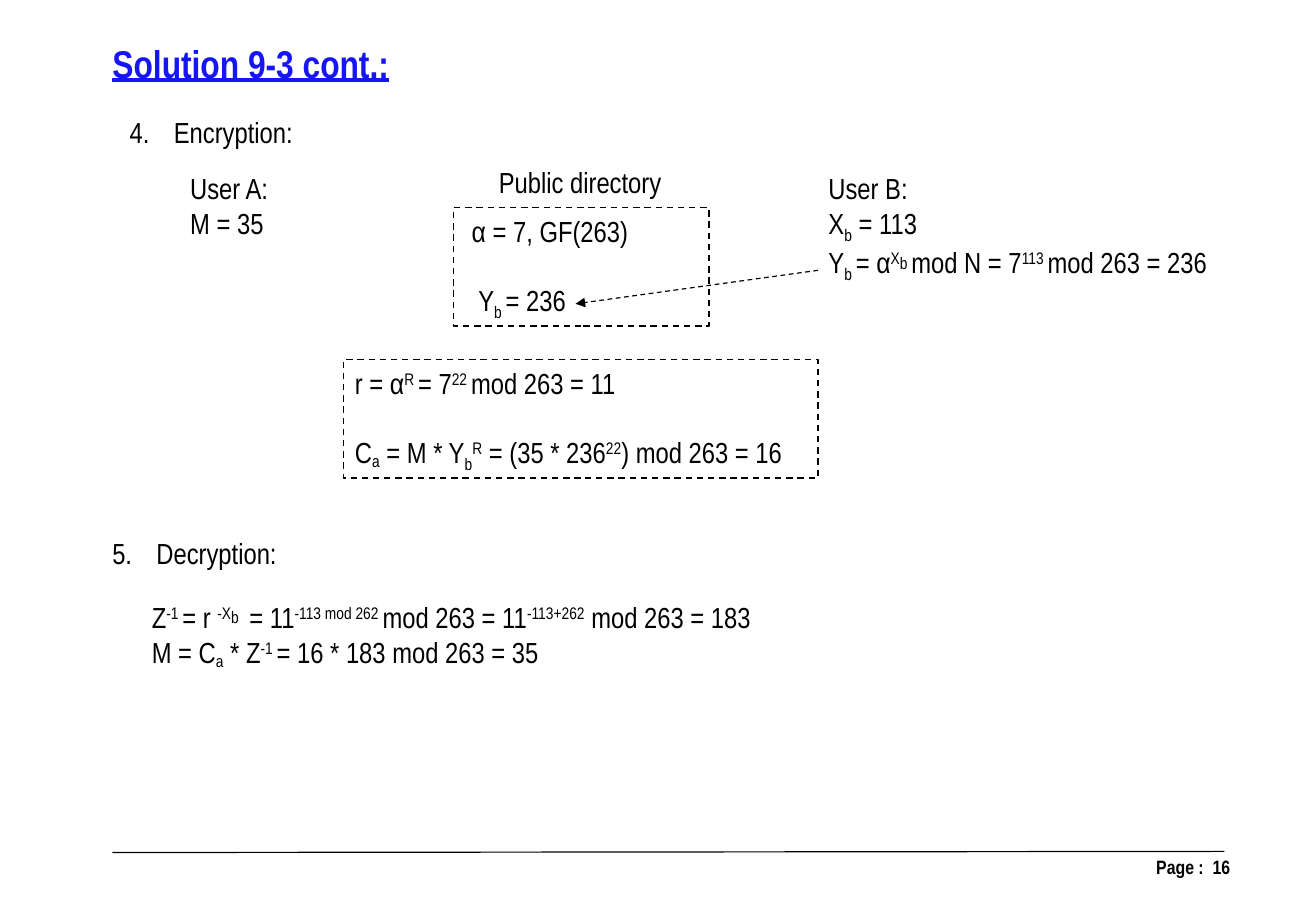
from lxml.etree import SubElement
from pptx import Presentation
from pptx.dml.color import RGBColor
from pptx.enum.dml import MSO_LINE
from pptx.enum.shapes import MSO_CONNECTOR, MSO_SHAPE
from pptx.enum.text import MSO_ANCHOR, MSO_AUTO_SIZE, PP_ALIGN
from pptx.oxml.ns import qn
from pptx.util import Pt

COLORS = {"ink": "000000", "title": "1515F5", "paper": "FFFFFF"}
SUPER, RAISED, LOWERED, SUB = 30, 16, -14, -25


class SolutionPage:
    font = "Arial Narrow"
    size = 18

    def __init__(self, deck):
        self.page = deck.slides.add_slide(deck.slide_layouts[5])

    def color(self, name):
        return RGBColor.from_string(COLORS[name])

    def frame(self, box, insets=(7.2, 3.6), wrap=False):
        frame = box.text_frame
        frame.auto_size = MSO_AUTO_SIZE.NONE
        frame.word_wrap = wrap
        frame.vertical_anchor = MSO_ANCHOR.TOP
        frame.margin_left = frame.margin_right = Pt(insets[0])
        frame.margin_top = frame.margin_bottom = Pt(insets[1])
        return frame

    def add_runs(self, para, runs, size=None, color="ink", bold=False,
                 underline=False, align=PP_ALIGN.LEFT):
        para.alignment = align
        for text, baseline in runs:
            span = para.add_run()
            span.text = text
            span.font.name = self.font
            span.font.size = Pt(size or self.size)
            span.font.bold = bold
            span.font.underline = underline
            span.font.color.rgb = self.color(color)
            if baseline:
                span._r.get_or_add_rPr().set("baseline", str(baseline * 1000))

    def add_lines(self, frame, lines, indents=(), gap=0):
        for index, runs in enumerate(lines):
            para = frame.add_paragraph() if index else frame.paragraphs[0]
            if index and gap:
                para.space_before = Pt(gap)
            if indents:
                para._p.get_or_add_pPr().set("marL", str(Pt(indents[index])))
            self.add_runs(para, runs)

    def title(self, place, text):
        box = self.page.shapes.title
        box.left, box.top, box.width, box.height = map(Pt, place)
        para = self.frame(box).paragraphs[0]
        self.add_runs(para, [(text, 0)], 24, "title", True, True)

    def text(self, place, lines):
        box = self.page.shapes.add_textbox(*map(Pt, place))
        self.add_lines(self.frame(box), lines)

    def step(self, place, number, text):
        box = self.page.shapes.add_textbox(*map(Pt, place))
        para = self.frame(box).paragraphs[0]
        self.add_runs(para, [(text, 0)])
        props = para._p.get_or_add_pPr()
        props.set("marL", str(Pt(27.4)))
        props.set("indent", str(Pt(-27.4)))
        SubElement(props, qn("a:buAutoNum"), type="arabicPeriod",
                   startAt=str(number))

    def dashed_box(self, place, lines, indents=(), filled=False):
        box = self.page.shapes.add_shape(MSO_SHAPE.RECTANGLE, *map(Pt, place))
        box.shadow.inherit = False
        if filled:
            box.fill.solid()
            box.fill.fore_color.rgb = self.color("paper")
        else:
            box.fill.background()
        box.line.color.rgb = self.color("ink")
        box.line.width = Pt(1)
        box.line.dash_style = MSO_LINE.DASH
        self.add_lines(self.frame(box, wrap=True), lines, indents, gap=21.4)

    def line(self, start, end, arrow=False):
        line = self.page.shapes.add_connector(
            MSO_CONNECTOR.STRAIGHT, *map(Pt, start + end))
        line.line.color.rgb = self.color("ink")
        line.line.width = Pt(0.75)
        props = line._element.spPr
        if arrow:
            line.line.dash_style = MSO_LINE.DASH
            SubElement(props.find(qn("a:ln")), qn("a:tailEnd"),
                       type="triangle")
        SubElement(props, qn("a:effectLst"))

    def footer(self, place, runs):
        box = self.page.shapes.add_textbox(*map(Pt, place))
        para = self.frame(box, (8.6, 4.3), True).paragraphs[0]
        self.add_runs(para, runs, 12, bold=True, align=PP_ALIGN.RIGHT)


def main():
    deck = Presentation()
    deck.slide_width, deck.slide_height = Pt(816.48), Pt(567.36)
    page = SolutionPage(deck)

    page.footer((586.1, 526.3, 185.8, 37.4), [("Page : ", 0), (" 16", 0)])
    page.line((69.8, 529.2), (759.6, 528.5))
    page.title((62.6, 20.9, 187.9, 36), "Solution 9-3 cont.:")

    page.step((73.4, 67.7, 116.6, 28.8), 4, "Encryption:")
    page.text((110.9, 102.2, 68.4, 51.1), [
        [("User A:", 0)],
        [("M = 35", 0)],
    ])
    page.text((506.9, 102.2, 260.6, 73.4), [
        [("User B:", 0)],
        [("X", 0), ("b", SUB), (" = 113", 0)],
        [("Y", 0), ("b ", SUB), ("= α", 0), ("X", SUPER), ("b ", RAISED),
         ("mod N = 7", 0), ("113 ", SUPER), ("mod 263 = 236", 0)],
    ])
    page.text((302.4, 98.6, 116.6, 28.8), [[("Public directory", 0)]])
    page.dashed_box((281.5, 128.9, 158.4, 73.4), [
        [("α = 7, GF(263)", 0)],
        [("Y", 0), ("b ", SUB), ("= 236", 0)],
    ], indents=(4.1, 8.2))
    page.dashed_box((213.1, 223.2, 294.5, 73.4), [
        [("r = α", 0), ("R ", SUPER), ("= 7", 0), ("22 ", SUPER),
         ("mod 263 = 11", 0)],
        [("C", 0), ("a", LOWERED), (" = M * Y", 0), ("b", SUB), ("R", SUPER),
         (" = (35 * 236", 0), ("22", SUPER), (") mod 263 = 16", 0)],
    ], filled=True)
    page.line((507.6, 167.8), (357.1, 188.6), arrow=True)

    page.step((62.6, 329, 117.4, 28.8), 5, "Decryption:")
    page.text((87.1, 368.6, 410.4, 51.1), [
        [("Z", 0), ("-1 ", SUPER), ("= r ", 0), ("-X", SUPER), ("b ", RAISED),
         (" = 11", 0), ("-113 mod 262 ", SUPER), ("mod 263 = 11", 0),
         ("-113+262", SUPER), (" mod 263 = 183", 0)],
        [("M = C", 0), ("a", LOWERED), (" * Z", 0), ("-1 ", SUPER),
         ("= 16 * 183 mod 263 = 35", 0)],
    ])
    deck.save("out.pptx")


if __name__ == "__main__":
    main()
